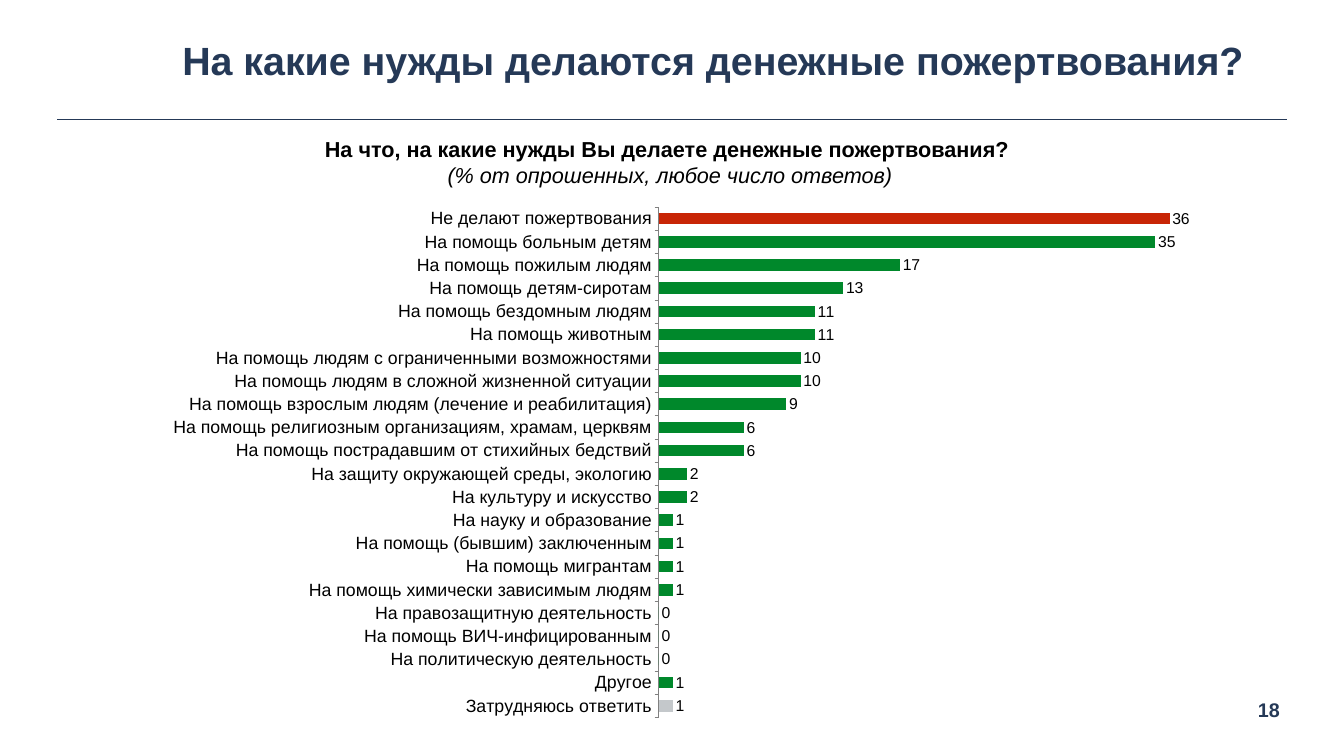
from dataclasses import dataclass

from lxml import etree
from pptx import Presentation
from pptx import util as u
from pptx.chart.data import CategoryChartData
from pptx.dml.color import RGBColor
from pptx.enum import chart as ch, shapes, text
from pptx.oxml import ns


@dataclass(frozen=True)
class Theme:
    """Colours and type sizes of the slide."""
    font: str = "Arial"
    navy: str = "253957"
    black: str = "000000"
    green: str = "00882B"
    red: str = "C82506"
    grey: str = "C4C8CB"
    axis: str = "808080"
    title: int = 40
    subtitle: int = 22
    number: int = 20
    category: int = 18
    value: int = 16


ANSWERS = [
    ("Не делают пожертвования", 36),
    ("На помощь больным детям", 35),
    ("На помощь пожилым людям", 17),
    ("На помощь детям-сиротам", 13),
    ("На помощь бездомным людям", 11),
    ("На помощь животным", 11),
    ("На помощь людям с ограниченными возможностями", 10),
    ("На помощь людям в сложной жизненной ситуации", 10),
    ("На помощь взрослым людям (лечение и реабилитация)", 9),
    ("На помощь религиозным организациям, храмам, церквям", 6),
    ("На помощь пострадавшим от стихийных бедствий", 6),
    ("На защиту окружающей среды, экологию", 2),
    ("На культуру и искусство", 2),
    ("На науку и образование", 1),
    ("На помощь (бывшим) заключенным", 1),
    ("На помощь мигрантам", 1),
    ("На помощь химически зависимым людям", 1),
    ("На правозащитную деятельность", 0),
    ("На помощь ВИЧ-инфицированным", 0),
    ("На политическую деятельность", 0),
    ("Другое", 1),
    ("Затрудняюсь ответить", 1),
]


class SlideBuilder:
    """Draws elements on one slide, with places in percent of its size."""

    def __init__(self, prs, theme):
        """Add a title-and-body slide."""
        self.prs, self.theme = prs, theme
        self.s = prs.slides.add_slide(prs.slide_layouts[1])

    def box(self, x, y, w, h):
        """Turn percentages into lengths."""
        pw, ph = self.prs.slide_width, self.prs.slide_height
        return [int(share * full / 100) for share, full in zip((x, y, w, h), (pw, ph, pw, ph))]

    def style(self, font, size, color, bold=False, italic=False):
        """Apply the theme font."""
        font.name, font.size = self.theme.font, u.Pt(size)
        font.bold, font.italic = bold, italic
        font.color.rgb = RGBColor.from_string(color)

    def add_lines(self, sp, place, lines, size, color, anchor=text.MSO_ANCHOR.TOP, wrap=True):
        """Place a shape and fill it with centred lines."""
        sp.left, sp.top, sp.width, sp.height = self.box(*place)
        tf = sp.text_frame
        tf.word_wrap, tf.auto_size = wrap, text.MSO_AUTO_SIZE.NONE
        tf.vertical_anchor = anchor
        tf.margin_left = tf.margin_right = tf.margin_top = tf.margin_bottom = u.Inches(0.09)
        for i, (words, bold, italic) in enumerate(lines):
            p = tf.add_paragraph() if i else tf.paragraphs[0]
            p.alignment = text.PP_ALIGN.CENTER
            p.space_before = u.Pt(0)
            pPr = p._p.get_or_add_pPr()
            pPr.set("marL", "0")
            pPr.set("indent", "0")
            etree.SubElement(pPr, ns.qn("a:buNone"))
            r = p.add_run()
            r.text = words
            self.style(r.font, size, color, bold, italic)

    def title(self, place, words):
        """Fill the title placeholder."""
        self.add_lines(self.s.shapes.title, place, [(words, True, False)],
                       self.theme.title, self.theme.navy, text.MSO_ANCHOR.MIDDLE)

    def body(self, place, lines):
        """Fill the body placeholder."""
        self.add_lines(self.s.placeholders[1], place, lines,
                       self.theme.subtitle, self.theme.black)

    def number(self, place, words):
        """Add the page number."""
        sp = self.s.shapes.add_textbox(*self.box(*place))
        self.add_lines(sp, place, [(words, True, False)],
                       self.theme.number, self.theme.navy, wrap=False)

    def rule(self, left, right, y):
        """Add a thin horizontal line."""
        x1, y1, x2, y2 = self.box(left, y, right, y)
        line = self.s.shapes.add_connector(shapes.MSO_CONNECTOR.STRAIGHT, x1, y1, x2, y2)
        line.line.color.rgb = RGBColor.from_string(self.theme.navy)
        line.line.width = u.Pt(1)
        etree.SubElement(line._element.spPr, ns.qn("a:effectLst"))

    def bars(self, place, answers, plot, accents):
        """Add a bar chart with the first answer on top."""
        t = self.theme
        rows = answers[::-1]
        data = CategoryChartData(number_format="0")
        data.categories = [name for name, _ in rows]
        data.add_series("Series 1", [value for _, value in rows])
        chart = self.s.shapes.add_chart(
            ch.XL_CHART_TYPE.BAR_CLUSTERED, *self.box(*place), data).chart
        chart.has_legend = chart.has_title = False
        self.style(chart.font, t.value, t.black)
        self.axes(chart)
        bar = chart.plots[0]
        bar.gap_width, bar.vary_by_categories = 100, False
        series = bar.series[0]
        self.fill(series, t.green)
        for name, color in accents.items():
            self.fill(series.points[[row[0] for row in rows].index(name)], color)
        labels = series.data_labels
        labels.show_value = True
        labels.number_format, labels.number_format_is_linked = "0", False
        labels.position = ch.XL_LABEL_POSITION.OUTSIDE_END
        self.style(labels.font, t.value, t.black)
        self.plot_area(chart, plot)

    def axes(self, chart):
        """Style the category axis and hide the value axis."""
        t = self.theme
        names, values = chart.category_axis, chart.value_axis
        names.major_tick_mark = ch.XL_TICK_MARK.OUTSIDE
        names.has_major_gridlines = values.has_major_gridlines = False
        names.format.line.color.rgb = RGBColor.from_string(t.axis)
        names.format.line.width = u.Pt(0.75)
        self.style(names.tick_labels.font, t.category, t.black)
        values.minimum_scale, values.maximum_scale = 0, 40
        values.visible = False

    def fill(self, part, color):
        """Fill a series or a point with one colour."""
        part.format.fill.solid()
        part.format.fill.fore_color.rgb = RGBColor.from_string(color)

    def plot_area(self, chart, plot):
        """Fix the inner plot area in shares of the chart."""
        area = chart._chartSpace.chart.plotArea
        for old in area.findall(ns.qn("c:layout")):
            area.remove(old)
        layout = etree.Element(ns.qn("c:layout"))
        area.insert(0, layout)
        manual = etree.SubElement(layout, ns.qn("c:manualLayout"))
        settings = [("layoutTarget", "inner"), ("xMode", "edge"), ("yMode", "edge")]
        for tag, val in settings + list(zip("xywh", plot)):
            etree.SubElement(manual, ns.qn("c:" + tag)).set("val", str(val))


def main():
    """Build and save the slide."""
    prs, theme = Presentation(), Theme()
    prs.slide_width, prs.slide_height = u.Inches(18.96), u.Inches(10.67)
    slide = SlideBuilder(prs, theme)
    slide.rule(4.27, 95.78, 15.84)
    slide.number((93.04, 91.47, 2.74, 4.87), "18")
    slide.title((11.34, 3, 84.23, 9.93), "На какие нужды делаются денежные пожертвования? ")
    slide.body((8.44, 17.15, 82.81, 5.44), [
        ("На что, на какие нужды Вы делаете денежные пожертвования? ", True, False),
        ("(% от опрошенных, любое число ответов)", False, True),
    ])
    slide.bars((8.44, 26.71, 82.81, 68.88), ANSWERS, (0.49, 0.01, 0.51, 0.98),
               {ANSWERS[0][0]: theme.red, ANSWERS[-1][0]: theme.grey})
    prs.save("out.pptx")


if __name__ == "__main__":
    main()
